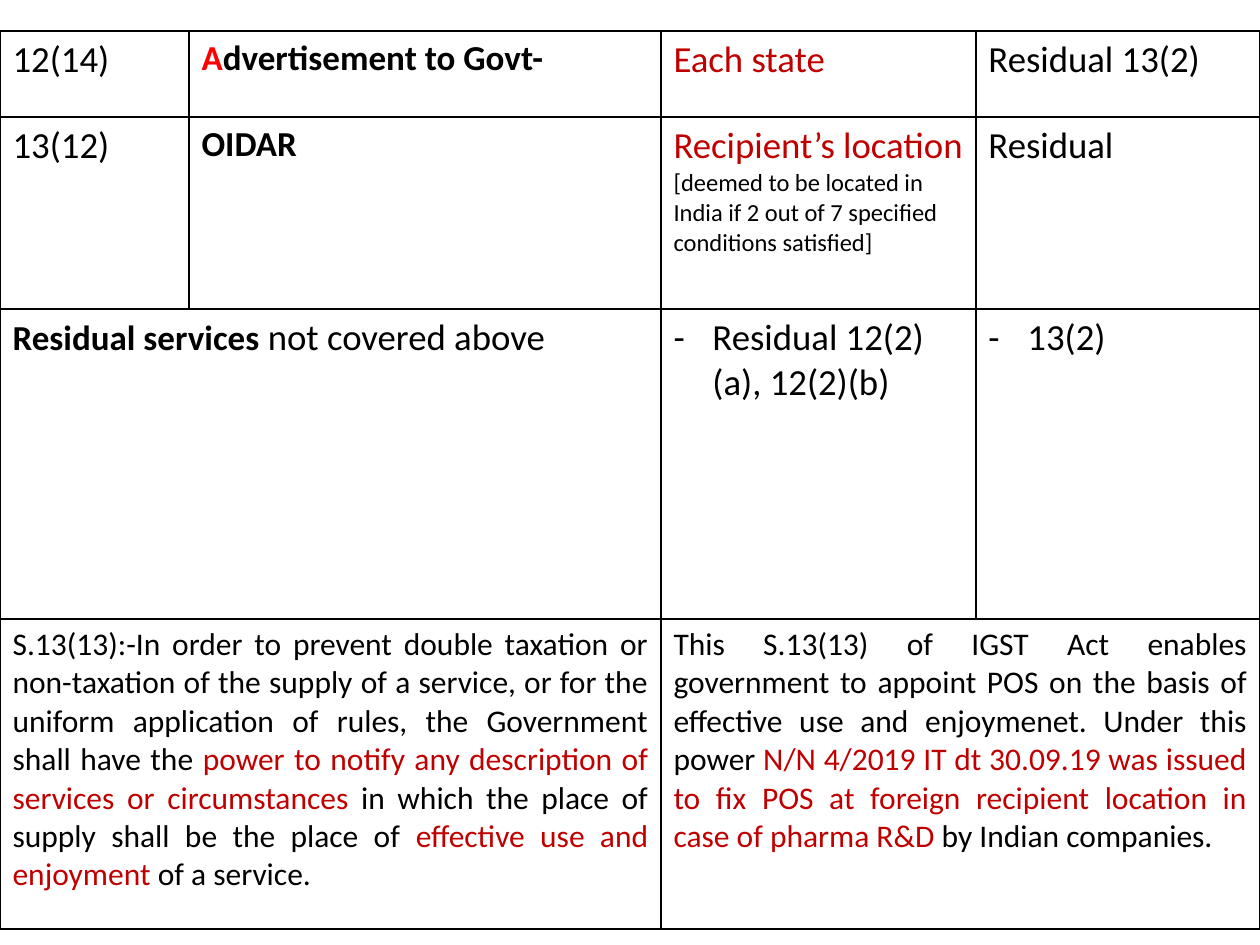
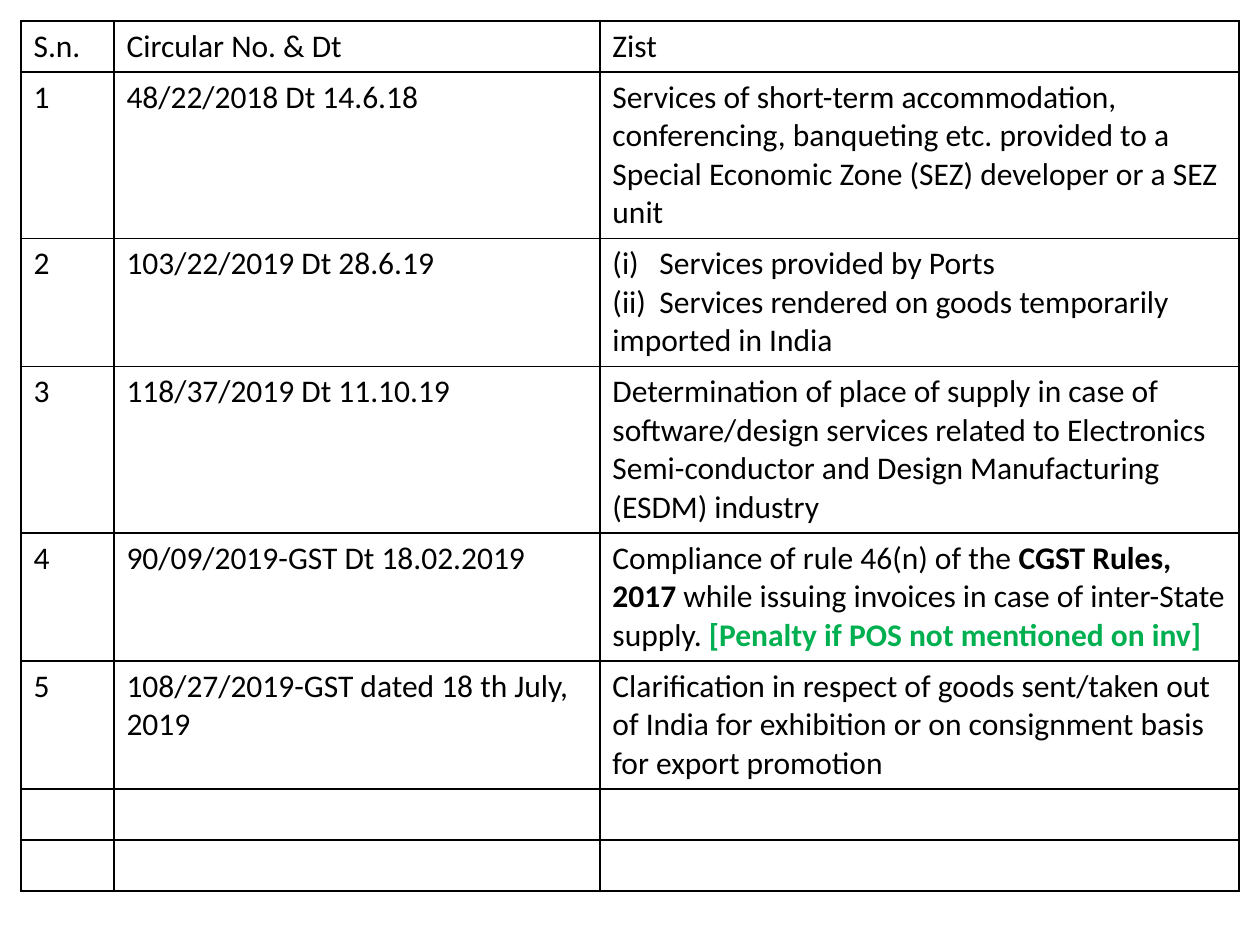
from dataclasses import dataclass

from lxml.etree import SubElement
from pptx import Presentation
from pptx.dml.color import RGBColor as RGB
from pptx.enum.text import PP_ALIGN as Align
from pptx.oxml.ns import qn
from pptx.util import Emu, Pt

PX = 914400 // 126


@dataclass(frozen=True)
class Theme:
    font: str = "Calibri"
    black: str = "000000"
    white: str = "FFFFFF"
    red: str = "FF0000"
    crimson: str = "C00000"
    green: str = "00B050"
    large: int = 21
    strong: int = 20
    body: int = 18
    note: int = 14
    border: int = 1


THEME = Theme()


@dataclass
class Run:
    text: str
    color: str = THEME.black
    bold: bool = False
    size: int = 0  # 0 takes the size of the paragraph


@dataclass
class Para:
    runs: list
    size: int = THEME.body
    align: object = None
    hang: int = 0
    bullet: str = ""
    tab: int = 0


def line(text, size=THEME.body, color=THEME.black, bold=False, **layout):
    return Para([Run(text, color, bold)], size, **layout)


def large(text, color=THEME.black, **layout):
    return line(text, THEME.large, color, **layout)


# Place of supply table: each row maps a first column to (columns spanned, paragraphs)
SERVICES = dict(
    left=0, top=31, columns=[189, 472, 315, 284], heights=[86, 192, 310, 310],
    rows=[
        {0: (1, [large("12(14)")]),
         1: (1, [Para([Run("A", THEME.red, True),
                       Run("dvertisement to Govt-", bold=True)],
                      THEME.strong, hang=39)]),
         2: (1, [large("Each state", THEME.crimson)]),
         3: (1, [large("Residual 13(2)")])},
        {0: (1, [large("13(12)")]),
         1: (1, [line("OIDAR", THEME.strong, bold=True)]),
         2: (1, [large("Recipient’s location", THEME.crimson),
                 line("[deemed to be located in India if 2 out of 7 specified "
                      "conditions satisfied]", THEME.note)]),
         3: (1, [large("Residual")])},
        {0: (2, [Para([Run("Residual services", bold=True, size=THEME.strong),
                       Run(" not covered above")], THEME.large)]),
         2: (1, [large("Residual 12(2)(a), 12(2)(b)", hang=39, bullet="-")]),
         3: (1, [large("13(2)", hang=39, bullet="-")])},
        {0: (2, [Para([
            Run("S.13(13):-In order to prevent double taxation or non-taxation of "
                "the supply of a service, or for the uniform application of rules, "
                "the Government shall have the "),
            Run("power to notify any description of services or circumstances",
                THEME.crimson),
            Run(" in which the place of supply shall be the place of "),
            Run("effective use and enjoyment", THEME.crimson),
            Run(" of a service.")], align=Align.JUSTIFY)]),
         2: (2, [Para([
             Run("This S.13(13) of IGST Act enables government to appoint POS on "
                 "the basis of effective use and enjoymenet. Under this power "),
             Run("N/N 4/2019 IT dt 30.09.19 was issued to fix POS at foreign "
                 "recipient location in case of pharma R&D ", THEME.crimson),
             Run("by Indian companies.")], align=Align.JUSTIFY)])},
    ])

# Circulars: number and date, then the gist; rows grow with their text
CIRCULAR_ROWS = [
    ("S.n.", "Circular No. & Dt", [line("Zist")]),
    ("1", "48/22/2018 Dt 14.6.18",
     [line("Services of short-term accommodation, conferencing, banqueting etc. "
           "provided to a Special Economic Zone (SEZ) developer or a SEZ unit")]),
    ("2", "103/22/2019 Dt 28.6.19",
     [line("(i)\tServices provided by Ports", tab=47),
      line("(ii)\tServices rendered on goods temporarily imported in India", tab=47)]),
    ("3", "118/37/2019 Dt 11.10.19",
     [line("Determination of place of supply in case of software/design services "
           "related to Electronics Semi-conductor and Design Manufacturing (ESDM) "
           "industry")]),
    ("4", "90/09/2019-GST Dt 18.02.2019",
     [Para([Run("Compliance of rule 46(n) of the "),
            Run("CGST Rules, 2017", bold=True),
            Run(" while issuing invoices in case of inter-State supply. "),
            Run("[Penalty if POS not mentioned on inv]", THEME.green, True)])]),
    ("5", "108/27/2019-GST dated 18 th July, 2019",
     [line("Clarification in respect of goods sent/taken out of India for "
           "exhibition or on consignment basis for export promotion")]),
]
EMPTY_ROWS = 2
CIRCULARS = dict(
    left=21, top=21, columns=[93, 486, 639],
    heights=[51] * (len(CIRCULAR_ROWS) + EMPTY_ROWS),
    rows=[{0: (1, [line(number)]), 1: (1, [line(circular)]), 2: (1, gist)}
          for number, circular, gist in CIRCULAR_ROWS] + [{}] * EMPTY_ROWS)


def px(value):
    return Emu(value * PX)


def style_font(font, size=0, color=None, bold=None):
    font.name = THEME.font
    if size:
        font.size = Pt(size)
    if color:
        font.color.rgb = RGB.from_string(color)
    if bold is not None:
        font.bold = bold


def write_paragraph(paragraph, content):
    # Indents, bullets and tabs come before the font
    properties = paragraph._p.get_or_add_pPr()
    if content.hang:
        properties.set("marL", str(px(content.hang)))
        properties.set("indent", str(-px(content.hang)))
    if content.bullet:
        SubElement(properties, qn("a:buFont"), typeface=THEME.font)
        SubElement(properties, qn("a:buChar"), char=content.bullet)
    if content.tab:
        tabs = SubElement(properties, qn("a:tabLst"))
        SubElement(tabs, qn("a:tab"), pos=str(px(content.tab)), algn="l")
    if content.align is not None:
        paragraph.alignment = content.align

    # One run sets the paragraph font; mixed runs carry their own differences
    first = content.runs[0]
    if len(content.runs) == 1:
        style_font(paragraph.font, content.size, first.color, first.bold)
    else:
        style_font(paragraph.font, content.size)
    for part in content.runs:
        run = paragraph.add_run()
        run.text = part.text
        if len(content.runs) > 1:
            style_font(run.font, part.size, part.color, part.bold)


def style_cell(cell):
    properties = cell._tc.get_or_add_tcPr()
    for side in ("a:lnL", "a:lnR", "a:lnT", "a:lnB"):
        border = SubElement(properties, qn(side), w=str(Pt(THEME.border)))
        fill = SubElement(border, qn("a:solidFill"))
        SubElement(fill, qn("a:srgbClr"), val=THEME.black)
    cell.fill.solid()
    cell.fill.fore_color.rgb = RGB.from_string(THEME.white)


def add_grid(slide, left, top, columns, heights, rows):
    table = slide.shapes.add_table(
        len(heights), len(columns), px(left), px(top),
        px(sum(columns)), px(sum(heights))).table
    table.first_row = table.horz_banding = False
    for column, width in zip(table.columns, columns):
        column.width = px(width)
    for row, height in zip(table.rows, heights):
        row.height = px(height)
    for cell in table.iter_cells():
        style_cell(cell)

    # Merge spanned cells and write the text
    for row_index, row in enumerate(rows):
        for column_index, (span, paragraphs) in row.items():
            cell = table.cell(row_index, column_index)
            if span > 1:
                cell.merge(table.cell(row_index, column_index + span - 1))
            frame = cell.text_frame
            for index, content in enumerate(paragraphs):
                paragraph = frame.add_paragraph() if index else frame.paragraphs[0]
                write_paragraph(paragraph, content)


def main():
    presentation = Presentation()
    presentation.slide_width, presentation.slide_height = px(1260), px(945)
    blank = presentation.slide_layouts[6]
    for grid in (SERVICES, CIRCULARS):
        add_grid(presentation.slides.add_slide(blank), **grid)
    presentation.save("out.pptx")


if __name__ == "__main__":
    main()
